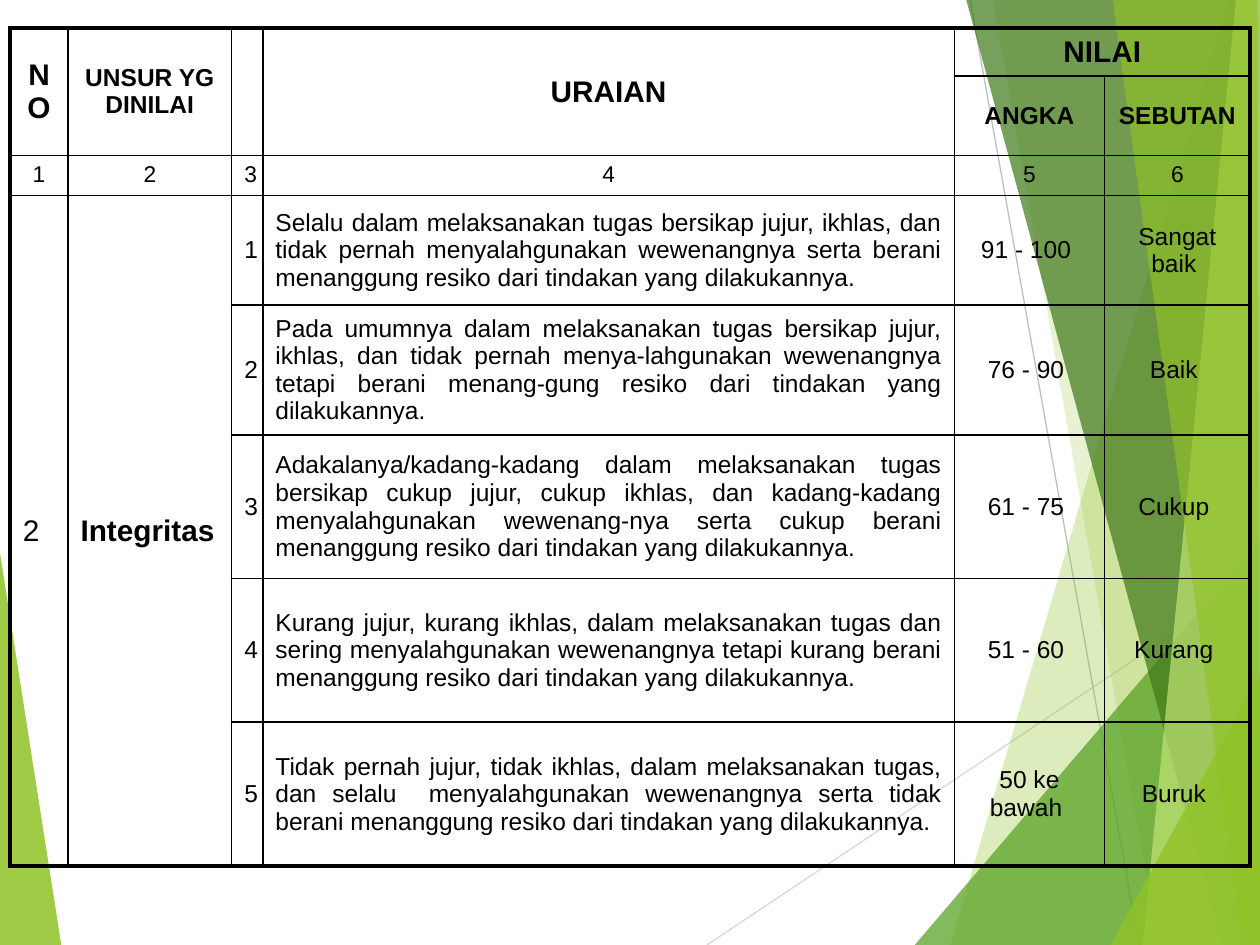
from lxml.etree import SubElement
from pptx import Presentation
from pptx.dml.color import RGBColor
from pptx.enum.shapes import MSO_CONNECTOR
from pptx.enum.text import MSO_ANCHOR, PP_ALIGN
from pptx.oxml.ns import qn
from pptx.util import Pt

BLACK = RGBColor(0x00, 0x00, 0x00)
LIME = RGBColor(0x90, 0xC2, 0x26)
GREEN = RGBColor(0x54, 0xA0, 0x21)
FOREST = RGBColor(0x3F, 0x78, 0x19)
PALE_LIME = RGBColor(0xC0, 0xE4, 0x74)
LIGHT_GREY = RGBColor(0xD9, 0xD9, 0xD9)
GREY = RGBColor(0xBF, 0xBF, 0xBF)

WIDTH, HEIGHT = 720, 540
NO_STYLE = "{2D5ABB26-0587-4C30-8999-92F81FD0307C}"

LEFT_FACET = ([(0, 316), (35, HEIGHT), (0, HEIGHT)], LIME, 85)
RAYS = [
    ((404, HEIGHT), (WIDTH, 329), LIGHT_GREY),
    ((554.4, 0), (650.9, HEIGHT), GREY),
]
RIGHT_FACETS = [
    ([(702, 0), (543, HEIGHT), (WIDTH, HEIGHT), (WIDTH, 0)], LIME, 30),
    ([(567.4, 0), (661.7, HEIGHT), (WIDTH, HEIGHT), (WIDTH, 0)], LIME, 20),
    ([(522.7, HEIGHT), (WIDTH, 309), (WIDTH, HEIGHT)], GREEN, 72),
    ([(552.2, 0), (698.4, HEIGHT), (WIDTH, HEIGHT), (WIDTH, 0)], FOREST, 70),
    ([(706.3, 0), (653, HEIGHT), (WIDTH, HEIGHT), (WIDTH, 0)], PALE_LIME, 70),
    ([(635.8, 0), (709.9, HEIGHT), (WIDTH, HEIGHT), (718.6, 0)], LIME, 65),
    ([(634.3, HEIGHT), (WIDTH, 385.2), (WIDTH, HEIGHT)], LIME, 80),
]

COLUMN_WIDTHS = [33, 93.6, 17.8, 395.2, 85.8, 83.2]
ROW_HEIGHTS = [27.4, 23.8, 23, 62.6, 74.2, 82.1, 82.1, 82.1]
MERGES = [(0, 0, 1, 0), (0, 1, 1, 1), (0, 2, 1, 2), (0, 3, 1, 3),
          (0, 4, 0, 5), (3, 0, 7, 0), (3, 1, 7, 1)]

LARGE_HEAD = {"size": Pt(17), "bold": True}
SMALL_HEAD = {"size": Pt(14), "bold": True}
NUMBERING = {"size": Pt(13), "bold": False}
BODY = {"size": Pt(14), "bold": False}
HEADINGS = [
    (0, 0, "NO", LARGE_HEAD), (0, 1, "UNSUR YG DINILAI", SMALL_HEAD),
    (0, 3, "URAIAN", LARGE_HEAD), (0, 4, "NILAI", LARGE_HEAD),
    (1, 4, "ANGKA", SMALL_HEAD), (1, 5, "SEBUTAN", SMALL_HEAD),
]
RATINGS = [
    ("Selalu dalam melaksanakan tugas bersikap jujur, ikhlas, dan tidak pernah "
     "menyalahgunakan wewenangnya serta berani menanggung resiko dari tindakan "
     "yang dilakukannya.", "91 - 100 ", "Sangat baik "),
    ("Pada umumnya dalam melaksanakan tugas bersikap jujur, ikhlas, dan tidak "
     "pernah menya-lahgunakan wewenangnya tetapi berani menang-gung resiko dari "
     "tindakan yang dilakukannya.", "76 - 90 ", "Baik "),
    ("Adakalanya/kadang-kadang dalam melaksanakan tugas bersikap cukup jujur, "
     "cukup ikhlas, dan kadang-kadang menyalahgunakan wewenang-nya serta cukup "
     "berani menanggung resiko dari tindakan yang dilakukannya.",
     "61 - 75 ", "Cukup "),
    ("Kurang jujur, kurang ikhlas, dalam melaksanakan tugas dan sering "
     "menyalahgunakan wewenangnya tetapi kurang berani menanggung resiko dari "
     "tindakan yang dilakukannya.", "51 - 60 ", "Kurang "),
    ("Tidak pernah jujur, tidak ikhlas, dalam melaksanakan tugas, dan selalu  "
     "menyalahgunakan wewenangnya serta tidak berani menanggung resiko dari "
     "tindakan yang dilakukannya.", "50 ke bawah ", "Buruk "),
]


class SlideBuilder:
    font_name = "Arial"
    ray_width = Pt(0.75)
    inner_border = Pt(1)
    outer_border = Pt(2.25)

    def __init__(self, slide):
        self.slide = slide

    def facet(self, points, color, opacity):
        """Draw a translucent polygon; opacity is in percent."""
        start, *others = [(Pt(x), Pt(y)) for x, y in points]
        builder = self.slide.shapes.build_freeform(*start)
        builder.add_line_segments(others, close=True)
        shape = builder.convert_to_shape()
        shape.shadow.inherit = False
        shape.line.fill.background()
        shape.fill.solid()
        shape.fill.fore_color.rgb = color
        color_element = shape._element.spPr.find(".//" + qn("a:srgbClr"))
        SubElement(color_element, qn("a:alpha"), val=str(opacity * 1000))

    def ray(self, start, end, color):
        ends = [Pt(value) for value in (*start, *end)]
        line = self.slide.shapes.add_connector(MSO_CONNECTOR.STRAIGHT, *ends)
        line.line.color.rgb = color
        line.line.width = self.ray_width
        SubElement(line._element.spPr, qn("a:effectLst"))

    def table(self, left, top, column_widths, row_heights, merges):
        frame = self.slide.shapes.add_table(
            len(row_heights), len(column_widths), Pt(left), Pt(top),
            Pt(sum(column_widths)), Pt(sum(row_heights)))
        table = frame.table
        table.first_row = table.horz_banding = False
        table._tbl.tblPr.find(qn("a:tableStyleId")).text = NO_STYLE
        for column, width in zip(table.columns, column_widths):
            column.width = Pt(width)
        for row, height in zip(table.rows, row_heights):
            row.height = Pt(height)
        for first_row, first_column, last_row, last_column in merges:
            table.cell(first_row, first_column).merge(
                table.cell(last_row, last_column))
        for row in range(len(row_heights)):
            for column in range(len(column_widths)):
                self.frame_cell(table, row, column)
        return table

    def frame_cell(self, table, row, column):
        """Give a cell its borders, heavier along the table's outside."""
        cell = table.cell(row, column)
        if not cell.is_spanned:
            outer_sides = {
                "L": column == 0,
                "R": column + cell.span_width == len(table.columns),
                "T": row == 0,
                "B": row + cell.span_height == len(table.rows),
            }
            properties = cell._tc.get_or_add_tcPr()
            for side, is_outer in outer_sides.items():
                width = self.outer_border if is_outer else self.inner_border
                border = SubElement(properties, qn("a:ln" + side), w=str(width))
                fill = SubElement(border, qn("a:solidFill"))
                SubElement(fill, qn("a:srgbClr"), val=str(BLACK))
        cell.fill.background()

    def cell_text(self, cell, text, style, align=PP_ALIGN.CENTER,
                  anchor=MSO_ANCHOR.MIDDLE):
        cell.vertical_anchor = anchor
        para = cell.text_frame.paragraphs[0]
        para.alignment = align
        para.space_before = Pt(style["size"].pt * 0.2)
        span = para.add_run()
        span.text = text
        span.font.color.rgb = BLACK
        for name, value in {"name": self.font_name, **style}.items():
            setattr(span.font, name, value)


def main():
    deck = Presentation()
    deck.slide_width, deck.slide_height = Pt(WIDTH), Pt(HEIGHT)
    page = SlideBuilder(deck.slides.add_slide(deck.slide_layouts[6]))

    page.facet(*LEFT_FACET)
    for ray in RAYS:
        page.ray(*ray)
    for facet in RIGHT_FACETS:
        page.facet(*facet)

    table = page.table(5.8, 16, COLUMN_WIDTHS, ROW_HEIGHTS, MERGES)
    for row, column, text, style in HEADINGS:
        page.cell_text(table.cell(row, column), text, style)
    for column in range(len(COLUMN_WIDTHS)):
        page.cell_text(table.cell(2, column), str(column + 1), NUMBERING,
                       anchor=MSO_ANCHOR.TOP)
    page.cell_text(table.cell(3, 0), "2", {**LARGE_HEAD, "bold": False},
                   PP_ALIGN.LEFT)
    page.cell_text(table.cell(3, 1), "Integritas", LARGE_HEAD, PP_ALIGN.LEFT)
    for row, (description, score, label) in enumerate(RATINGS, start=3):
        page.cell_text(table.cell(row, 2), str(row - 2), BODY, PP_ALIGN.LEFT)
        page.cell_text(table.cell(row, 3), description, BODY, PP_ALIGN.JUSTIFY)
        page.cell_text(table.cell(row, 4), score, BODY)
        page.cell_text(table.cell(row, 5), label, BODY)

    deck.save("out.pptx")


if __name__ == "__main__":
    main()
